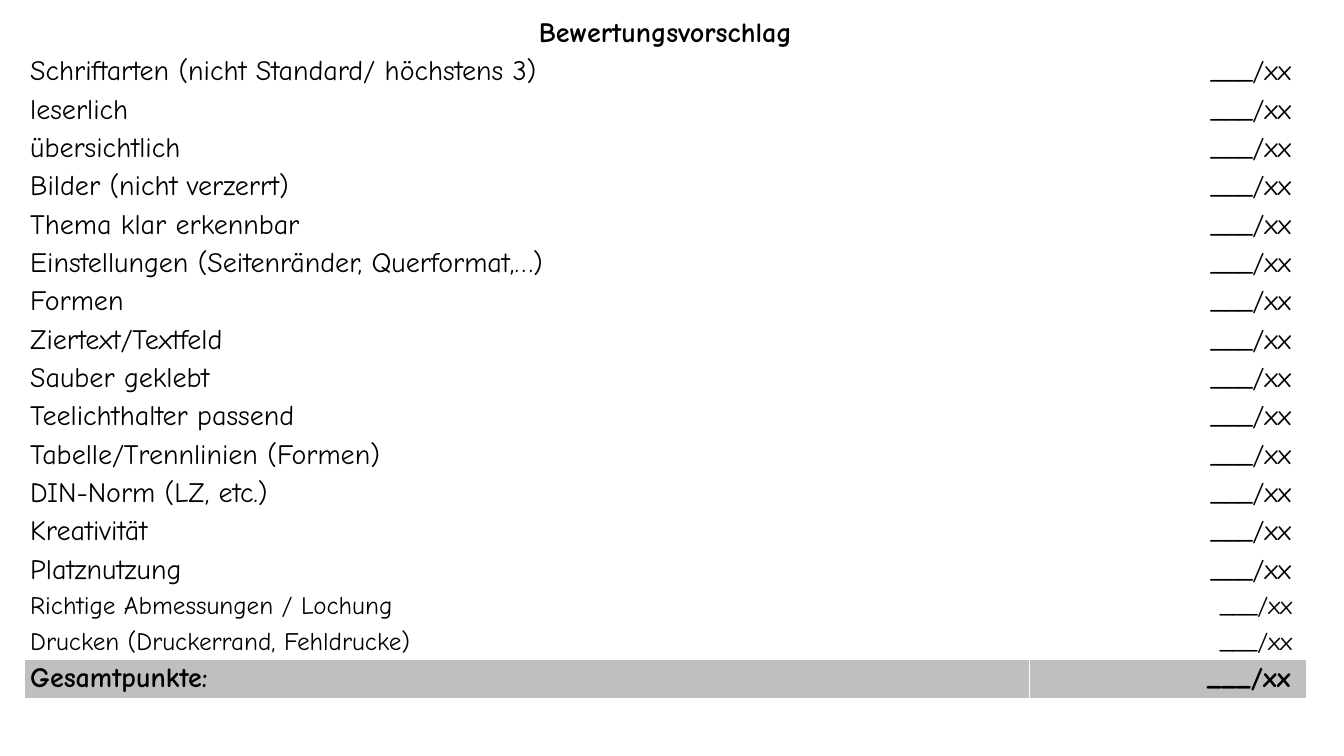
"""Build the grading sheet slide with one point per criterion."""
from lxml.etree import SubElement
from pptx import Presentation
from pptx.dml.color import RGBColor
from pptx.enum.text import MSO_ANCHOR as Anchor, PP_ALIGN as Align
from pptx.oxml.ns import qn
from pptx.util import Inches, Pt

BLACK = RGBColor(0x00, 0x00, 0x00)
WHITE = RGBColor(0xFF, 0xFF, 0xFF)
GRAY = RGBColor(0xBF, 0xBF, 0xBF)

TITLE = "Bewertungsvorschlag"
TOTAL = "Gesamtpunkte:"
SCORE = "___/xx "
CRITERIA = [
    "Schriftarten (nicht Standard/ höchstens 3)",
    "leserlich",
    "übersichtlich",
    "Bilder (nicht verzerrt)",
    "Thema klar erkennbar",
    "Einstellungen (Seitenränder, Querformat,…)",
    "Formen",
    "Ziertext/Textfeld",
    "Sauber geklebt",
    "Teelichthalter passend",
    "Tabelle/Trennlinien (Formen)",
    "DIN-Norm (LZ, etc.)",
    "Kreativität",
    "Platznutzung",
]
PRINT_CRITERIA = [
    "Richtige Abmessungen / Lochung",
    "Drucken (Druckerrand, Fehldrucke)",
]


class GradingSlide:
    """Hold the table style and the current slide."""

    font_name = "Comic Neue"
    row_heights = {20: 0.38, 18: 0.35}

    def __init__(self, slide):
        self.slide = slide

    def add_borders(self, cell):
        properties = cell._tc.get_or_add_tcPr()
        for side in ("a:lnL", "a:lnR", "a:lnT", "a:lnB"):
            line = SubElement(properties, qn(side), w=str(Pt(0.75)))
            fill = SubElement(line, qn("a:solidFill"))
            SubElement(fill, qn("a:srgbClr"), val=str(WHITE))

    def fill_cell(self, cell, text, align, size, bold, color):
        self.add_borders(cell)
        cell.fill.solid()
        cell.fill.fore_color.rgb = color
        cell.vertical_anchor = Anchor.MIDDLE
        cell.margin_left = cell.margin_right = Inches(0.06)
        cell.margin_top = cell.margin_bottom = Inches(0.03)
        cell.text = text
        paragraph = cell.text_frame.paragraphs[0]
        paragraph.alignment = align
        paragraph.font.name = self.font_name
        paragraph.font.size = Pt(size)
        paragraph.font.bold = bold
        paragraph.font.color.rgb = BLACK

    def add_grading_table(self, title, rows, left, top, widths):
        heights = [self.row_heights[size] for _, size, _, _ in rows]
        heights.insert(0, self.row_heights[20])
        frame = self.slide.shapes.add_table(
            len(heights), len(widths), Inches(left), Inches(top),
            Inches(sum(widths)), Inches(sum(heights)))
        table = frame.table
        table.first_row = table.horz_banding = False
        for column, width in zip(table.columns, widths):
            column.width = Inches(width)
        for row, height in zip(table.rows, heights):
            row.height = Inches(height)
        table.cell(0, 0).merge(table.cell(0, 1))
        self.fill_cell(table.cell(0, 0), title, Align.CENTER, 20, True, WHITE)
        for index, (label, size, bold, color) in enumerate(rows, 1):
            self.fill_cell(table.cell(index, 0), label, Align.LEFT, size, bold, color)
            self.fill_cell(table.cell(index, 1), SCORE, Align.RIGHT, size, bold, color)


def main():
    presentation = Presentation()
    presentation.slide_width = Inches(13.33)
    presentation.slide_height = Inches(7.5)
    slide = presentation.slides.add_slide(presentation.slide_layouts[6])
    rows = [(label, 20, False, WHITE) for label in CRITERIA]
    rows += [(label, 18, False, WHITE) for label in PRINT_CRITERIA]
    rows.append((TOTAL, 20, True, GRAY))
    GradingSlide(slide).add_grading_table(TITLE, rows, 0.24, 0.14, [9.97, 2.75])
    presentation.save("out.pptx")


if __name__ == "__main__":
    main()
